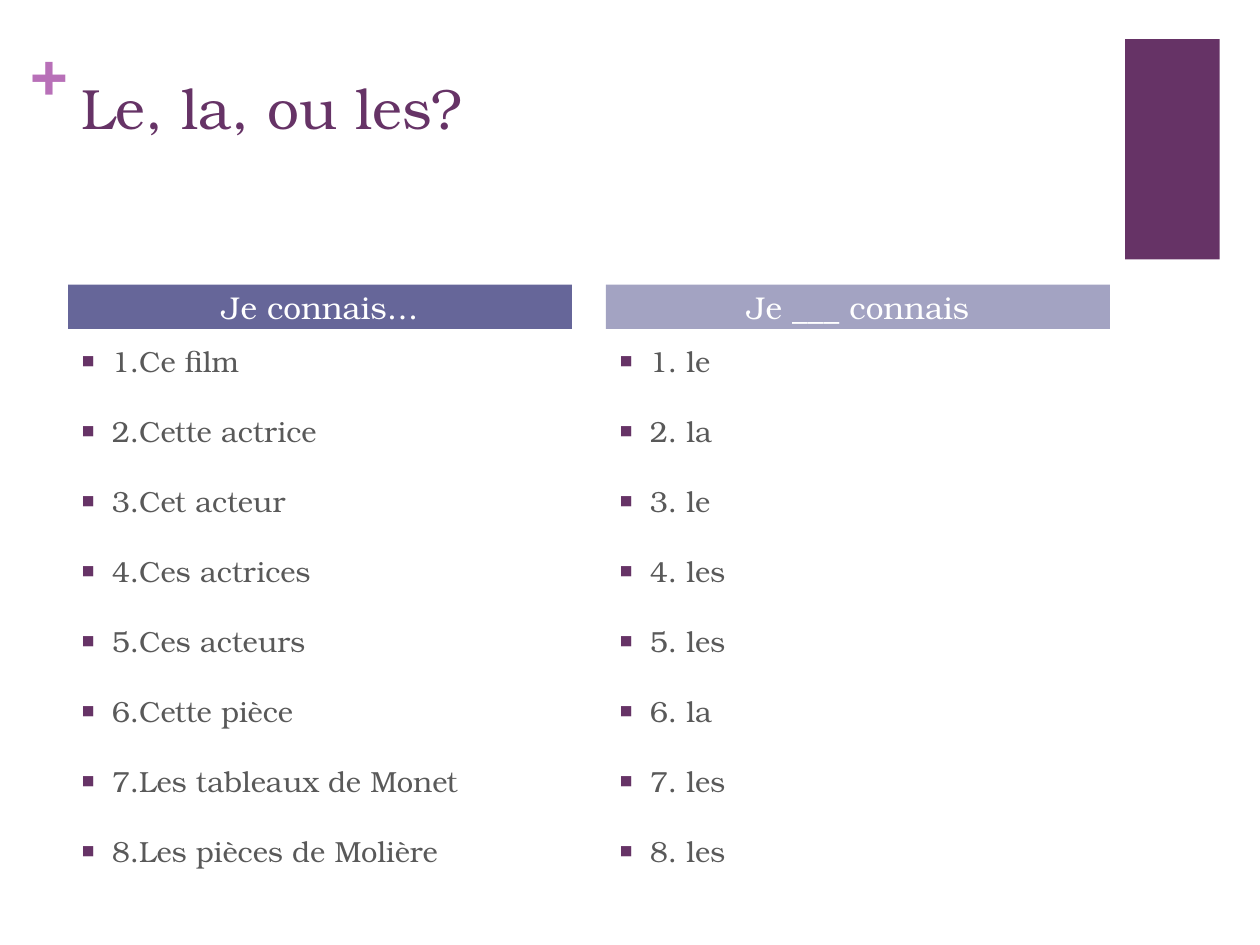
from lxml.etree import SubElement as Sub
from pptx import Presentation as Deck
from pptx.dml.color import RGBColor as Color
from pptx.enum.shapes import MSO_SHAPE as Kind
from pptx.enum.text import MSO_ANCHOR as Anchor, PP_ALIGN as Align
from pptx.oxml.ns import qn
from pptx.util import Inches, Pt

FONT = "TeX Gyre Bonum"
PLUM = "663366"
LEFT = ["1.Ce film", "2.Cette actrice", "3.Cet acteur", "4.Ces actrices",
        "5.Ces acteurs", "6.Cette pièce", "7.Les tableaux de Monet",
        "8.Les pièces de Molière"]
RIGHT = [f"{num}. {word}" for num, word in
         enumerate("le la le les les la les les".split(), 1)]
COLS = [(0.54, "Je connais…", "666699", LEFT),
        (4.81, "Je ___ connais", "A3A3C2", RIGHT)]


def tint(part, code):
    part.rgb = Color.from_string(code)


def put(item, values):
    for name, value in values.items():
        setattr(item, name, value)


def write(para, text, size, code, bold=False):
    run = para.add_run()
    run.text = text
    put(run.font, {"name": FONT, "size": Pt(size), "bold": bold})
    tint(run.font.color, code)


def add_box(slide, at, wrap=True, **form):
    frame = slide.shapes.add_textbox(*map(Inches, at)).text_frame
    put(frame, {"word_wrap": wrap, "vertical_anchor": Anchor.TOP, **form})
    return frame


def add_rect(slide, at, code):
    rect = slide.shapes.add_shape(Kind.RECTANGLE, *map(Inches, at))
    rect.shadow.inherit = False
    rect.fill.solid()
    tint(rect.fill.fore_color, code)
    rect.line.fill.background()
    return rect


def add_head(slide, at, text, code):
    frame = add_rect(slide, at, code).text_frame
    put(frame, {"margin_top": 0, "margin_bottom": 0, "word_wrap": True,
                "vertical_anchor": Anchor.MIDDLE})
    para = frame.paragraphs[0]
    para.alignment = Align.CENTER
    write(para, text, 18, "FFFFFF")


def add_mark(para):
    props = para._p.get_or_add_pPr()
    props.set("marL", str(Inches(0.25)))
    props.set("indent", str(-Inches(0.25)))
    hue = Sub(props, qn("a:buClr"))
    Sub(hue, qn("a:srgbClr"), val=PLUM)
    Sub(props, qn("a:buSzPct"), val="75000")
    Sub(props, qn("a:buFont"), typeface=FONT)
    Sub(props, qn("a:buChar"), char="■")


def add_list(slide, at, lines):
    frame = add_box(slide, at)
    for num, line in enumerate(lines):
        para = frame.add_paragraph() if num else frame.paragraphs[0]
        para.space_before = Pt(20)
        add_mark(para)
        write(para, line, 16.6, "595959")


def main():
    deck = Deck()
    put(deck, {"slide_width": Inches(10), "slide_height": Inches(7.5)})
    slide = deck.slides.add_slide(deck.slide_layouts[6])
    add_rect(slide, (8.93, 0.31, 0.75, 1.75), PLUM)
    plus = add_box(slide, (0.24, 0.25, 0.29, 0.61), wrap=False, margin_left=0,
                   margin_top=0, margin_right=0, margin_bottom=0)
    write(plus.paragraphs[0], "+", 36, "B870B8", True)
    title = add_box(slide, (0.55, 0.53, 8.26, 1.22))
    write(title.paragraphs[0], "Le, la, ou les?", 32.4, PLUM)
    for left, head, code, lines in COLS:
        add_list(slide, (left, 2.68, 4, 4.02), lines)
        add_head(slide, (left, 2.26, 4, 0.35), head, code)
    deck.save("out.pptx")


if __name__ == "__main__":
    main()
